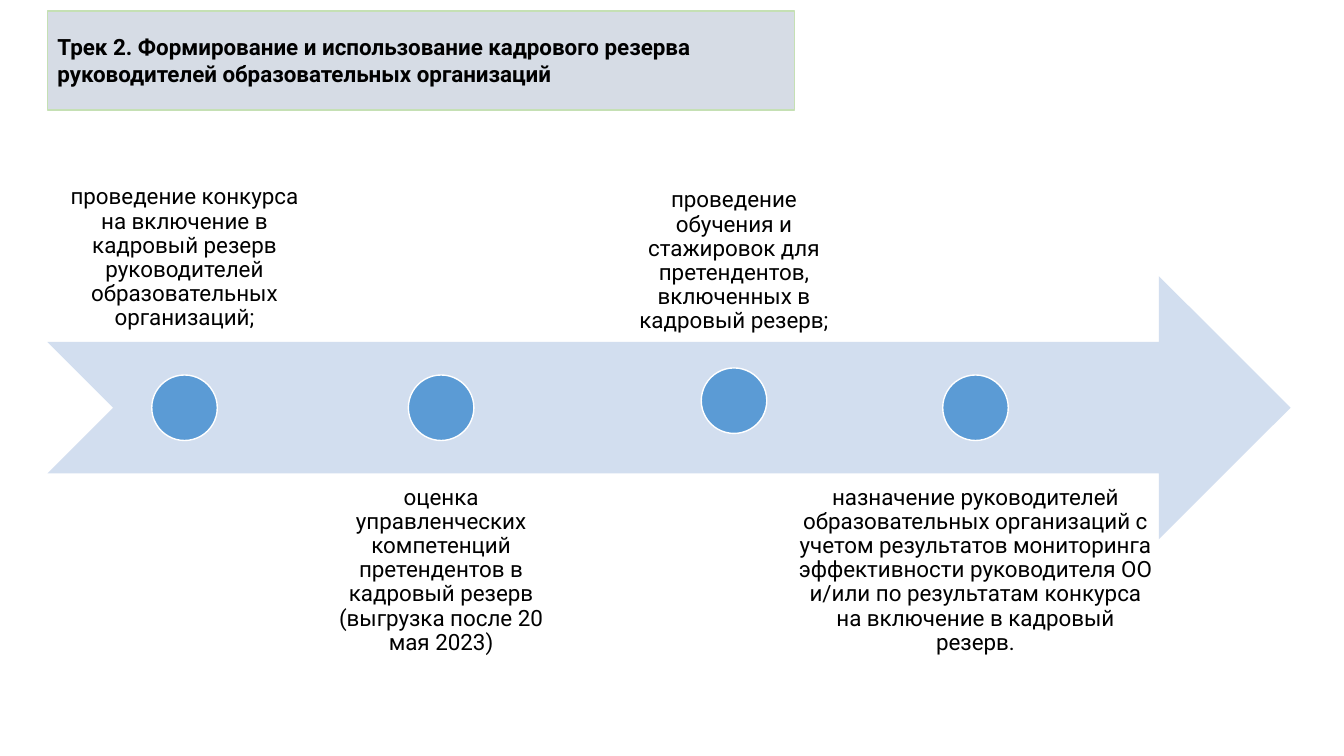
import pptx
import pptx.util
import pptx.dml.color
import pptx.enum.shapes
import pptx.enum.text
from pptx.util import Inches

# Content
TITLE = ("Трек 2. Формирование и использование кадрового резерва "
         "руководителей образовательных организаций")
# Each step: text, label left, label top, label width, above the arrow, dot top
STEPS = [
    ("проведение конкурса на включение в кадровый резерв руководителей "
     "образовательных организаций;", 0.48, 0.79, 2.7, True, 3.72),
    ("оценка управленческих компетенций претендентов в кадровый резерв "
     "(выгрузка после 20 мая 2023)", 3.24, 4.7, 2.27, False, 3.72),
    ("проведение обучения и стажировок для претендентов, включенных в "
     "кадровый резерв;", 6.21, 0.82, 2.14, True, 3.65),
    ("назначение руководителей образовательных организаций с учетом "
     "результатов мониторинга эффективности руководителя ОО и/или по "
     "результатам конкурса на включение в кадровый резерв.",
     7.79, 4.7, 3.77, False, 3.72),
]
THEME = {"font": "Roboto", "size": 16, "text": "000000", "title_fill": "D6DCE5",
         "title_line": "C5E0B4", "arrow": "D2DEEF", "dot": "5B9BD5",
         "dot_line": "FFFFFF"}
LABEL_HEIGHT = 2.61
DOT_SIZE = 0.65

SHAPE = pptx.enum.shapes.MSO_SHAPE
ALIGN = pptx.enum.text.PP_ALIGN
ANCHOR = pptx.enum.text.MSO_ANCHOR


def color(name):
    return pptx.dml.color.RGBColor.from_string(THEME[name])


def write_text(box, text, align=ALIGN.CENTER, anchor=ANCHOR.TOP, bold=False,
               spacing=0.9, inset_x=0.12, inset_y=0.12):
    frame = box.text_frame
    frame.word_wrap = True
    frame.auto_size = pptx.enum.text.MSO_AUTO_SIZE.NONE
    frame.vertical_anchor = anchor
    frame.margin_left = frame.margin_right = Inches(inset_x)
    frame.margin_top = frame.margin_bottom = Inches(inset_y)
    para = frame.paragraphs[0]
    para.alignment = align
    para.line_spacing = spacing
    span = para.add_run()
    span.text = text
    span.font.name = THEME["font"]
    span.font.size = pptx.util.Pt(THEME["size"])
    span.font.bold = bold
    span.font.color.rgb = color("text")


def paint(shape, fill, line=None):
    shape.fill.solid()
    shape.fill.fore_color.rgb = color(fill)
    if line:
        shape.line.color.rgb = color(line)
        shape.line.width = pptx.util.Pt(1)
    else:
        shape.line.fill.background()


def add_shape(page, kind, left, top, width, height, fill, line=None):
    shape = page.shapes.add_shape(kind, Inches(left), Inches(top),
                                  Inches(width), Inches(height))
    shape.shadow.inherit = False
    paint(shape, fill, line)


def main():
    deck = pptx.Presentation()
    deck.slide_width, deck.slide_height = Inches(13.33), Inches(7.5)
    page = deck.slides.add_slide(deck.slide_layouts[5])

    # Title
    title = page.shapes.title
    title.left, title.top = Inches(0.47), Inches(0.11)
    title.width, title.height = Inches(7.41), Inches(0.98)
    paint(title, "title_fill", "title_line")
    write_text(title, TITLE, align=ALIGN.LEFT, anchor=ANCHOR.MIDDLE, bold=True,
               spacing=1.0, inset_x=0.1, inset_y=0.05)

    # Timeline arrow
    add_shape(page, SHAPE.NOTCHED_RIGHT_ARROW, 0.47, 2.74, 12.33, 2.61, "arrow")

    # Steps: a label with a dot centred on it
    for text, left, top, width, above, dot_top in STEPS:
        label = page.shapes.add_textbox(Inches(left), Inches(top),
                                        Inches(width), Inches(LABEL_HEIGHT))
        write_text(label, text, anchor=ANCHOR.BOTTOM if above else ANCHOR.TOP)
        dot_left = left + (width - DOT_SIZE) / 2
        add_shape(page, SHAPE.OVAL, dot_left, dot_top, DOT_SIZE, DOT_SIZE,
                  "dot", "dot_line")

    deck.save("out.pptx")


if __name__ == "__main__":
    main()
